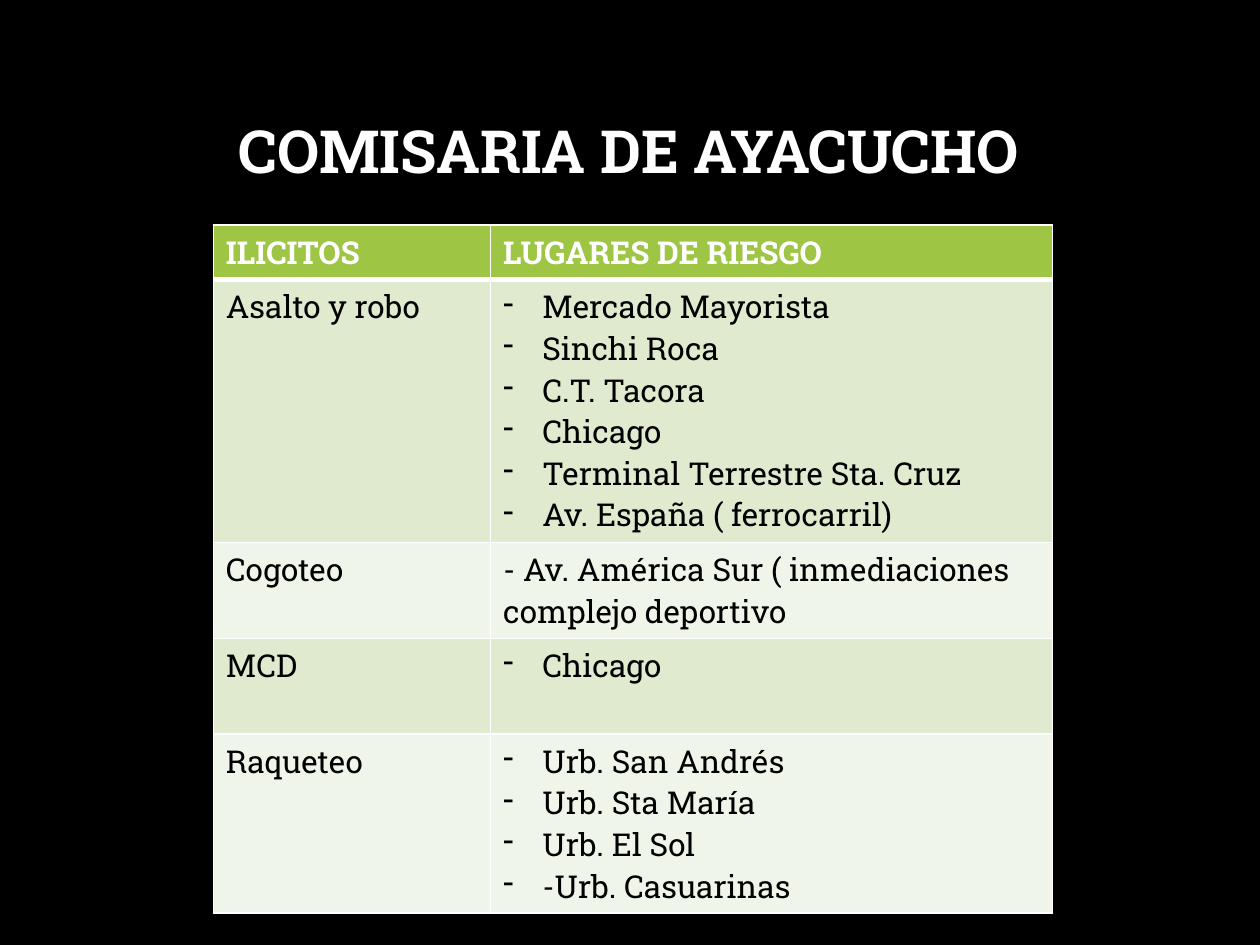
from dataclasses import dataclass

from lxml.etree import SubElement
from pptx import Presentation
from pptx.dml.color import RGBColor as Color
from pptx.enum.text import MSO_ANCHOR as Anchor, PP_ALIGN as Align
from pptx.oxml.ns import qn
from pptx.util import Cm, Pt


@dataclass(frozen=True)
class Theme:
    font: str = "Roboto Slab"
    black: Color = Color(0x00, 0x00, 0x00)
    white: Color = Color(0xFF, 0xFF, 0xFF)
    header: Color = Color(0x9E, 0xC5, 0x44)
    bands: tuple = (Color(0xDF, 0xEA, 0xCF), Color(0xF0, 0xF5, 0xE9))
    title_size: Pt = Pt(34)
    table_size: Pt = Pt(18)
    thin: Pt = Pt(1)
    thick: Pt = Pt(3)


theme = Theme()


def set_font(paragraph, size, color, bold):
    paragraph.font.name = theme.font
    paragraph.font.size = size
    paragraph.font.color.rgb = color
    paragraph.font.bold = bold


def add_border(cell, side, width):
    line = SubElement(cell._tc.get_or_add_tcPr(), qn(f"a:{side}"), w=str(width))
    fill = SubElement(line, qn("a:solidFill"))
    SubElement(fill, qn("a:srgbClr"), val=str(theme.white))


presentation = Presentation()
presentation.slide_width = Cm(25.4)
presentation.slide_height = Cm(19.05)
slide = presentation.slides.add_slide(presentation.slide_layouts[5])
slide.background.fill.solid()
slide.background.fill.fore_color.rgb = theme.black

title = slide.shapes.title
title.left, title.top, title.width, title.height = Cm(1.9), Cm(1.7), Cm(21.56), Cm(2.82)
title.text_frame.text = "COMISARIA DE AYACUCHO"
title.text_frame.vertical_anchor = Anchor.MIDDLE
heading = title.text_frame.paragraphs[0]
heading.alignment = Align.CENTER
heading.line_spacing = 0.9
set_font(heading, theme.title_size, theme.white, True)

rows = [
    (1.09, "ILICITOS", "LUGARES DE RIESGO"),
    (5.3, "Asalto y robo", [
        "Mercado Mayorista",
        "Sinchi Roca",
        "C.T. Tacora",
        "Chicago",
        "Terminal Terrestre Sta. Cruz",
        "Av. España ( ferrocarril)",
    ]),
    (1.93, "Cogoteo", "- Av. América Sur ( inmediaciones complejo deportivo"),
    (1.93, "MCD", ["Chicago"]),
    (3.61, "Raqueteo", [
        "Urb. San Andrés",
        "Urb. Sta María",
        "Urb. El Sol",
        "-Urb. Casuarinas",
    ]),
]
column_widths = [5.59, 11.33]
table_height = sum(row[0] for row in rows)

table = slide.shapes.add_table(
    len(rows), len(column_widths), Cm(4.3), Cm(4.54), Cm(sum(column_widths)), Cm(table_height)
).table
for column, width in zip(table.columns, column_widths):
    column.width = Cm(width)

for row_index, (height, *contents) in enumerate(rows):
    is_header = row_index == 0
    table.rows[row_index].height = Cm(height)
    for column_index, content in enumerate(contents):
        cell = table.cell(row_index, column_index)
        is_list = isinstance(content, list)
        cell.text = "\n".join(content) if is_list else content
        for paragraph in cell.text_frame.paragraphs:
            if is_list:
                properties = paragraph._p.get_or_add_pPr()
                properties.set("marL", str(Cm(0.79)))
                properties.set("indent", str(-Cm(0.79)))
                SubElement(properties, qn("a:buChar"), char="-")
            color = theme.white if is_header else theme.black
            set_font(paragraph, theme.table_size, color, is_header)
        for side in ("lnL", "lnR", "lnT", "lnB"):
            under_header = (row_index, side) in ((0, "lnB"), (1, "lnT"))
            add_border(cell, side, theme.thick if under_header else theme.thin)
        cell.fill.solid()
        cell.fill.fore_color.rgb = theme.header if is_header else theme.bands[(row_index - 1) % 2]

presentation.save("out.pptx")
